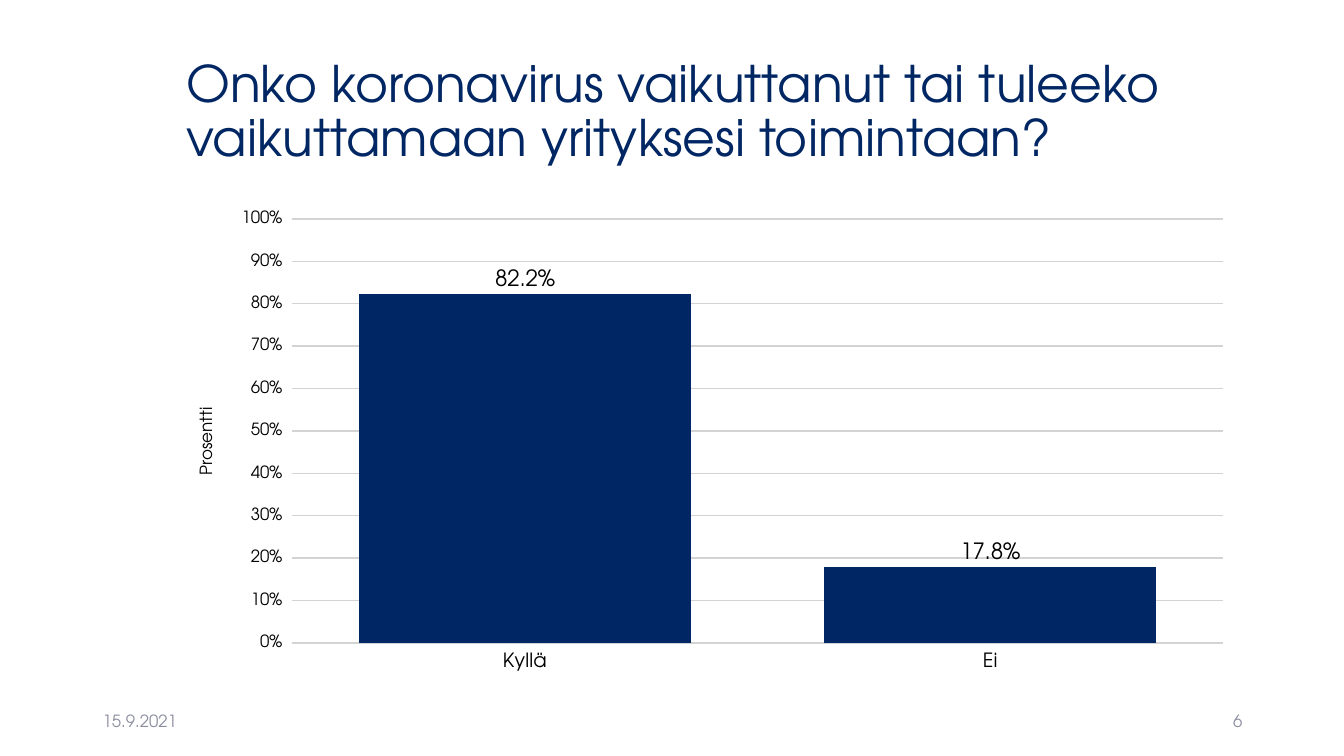
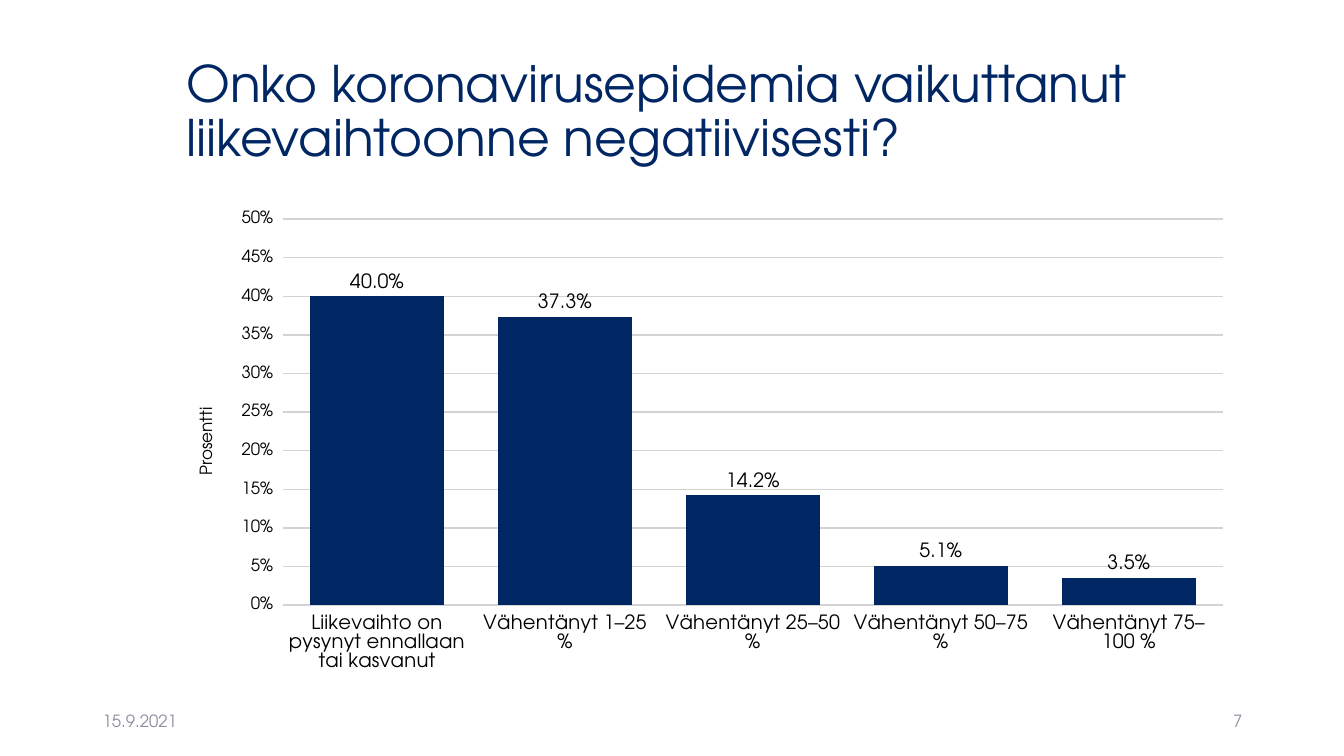
from pptx import Presentation
from pptx.chart.data import CategoryChartData
from pptx.dml.color import RGBColor
from pptx.enum.chart import XL_CHART_TYPE as ChartType, XL_LABEL_POSITION as LabelPos
from pptx.enum.text import MSO_ANCHOR as Anchor, PP_ALIGN as Align
from pptx.util import Inches, Pt

FONT = "TeX Gyre Adventor"
COLORS = {"navy": "002663", "footer": "8C8E9F", "text": "000000", "grid": "D3D3D3"}
DATE = "15.9.2021"
AXIS_TITLE = "Prosentti"

SLIDES = [
    {
        "number": 6,
        "title": "Onko koronavirus vaikuttanut tai tuleeko vaikuttamaan yrityksesi toimintaan?",
        "answers": [("Kyllä", 0.822), ("Ei", 0.178)],
        "axis_max": 1,
        "label_size": 16,
    },
    {
        "number": 7,
        "title": "Onko koronavirusepidemia vaikuttanut liikevaihtoonne negatiivisesti?",
        "answers": [
            ("Liikevaihto on pysynyt ennallaan tai kasvanut", 0.4),
            ("Vähentänyt 1–25 %", 0.373),
            ("Vähentänyt 25–50 %", 0.142),
            ("Vähentänyt 50–75 %", 0.051),
            ("Vähentänyt 75–100 %", 0.035),
        ],
        "axis_max": 0.5,
        "label_size": 14,
    },
]

TITLE_BOX = (1.75, 0.4, 10.59, 1.45)
CHART_BOX = (1.75, 2, 10.59, 4.76)
DATE_BOX = (0.92, 6.95, 3, 0.4)
NUMBER_BOX = (9.42, 6.95, 3, 0.4)


def rgb(name):
    return RGBColor.from_string(COLORS[name])


def set_font(font, size, color="text"):
    font.name = FONT
    font.size = Pt(size)
    font.bold = False
    font.color.rgb = rgb(color)


def add_text(s, box, text, size=12, color="footer", align=Align.LEFT, spacing=1.0):
    tf = s.shapes.add_textbox(*map(Inches, box)).text_frame
    tf.word_wrap = True
    tf.vertical_anchor = Anchor.MIDDLE
    p = tf.paragraphs[0]
    p.alignment = align
    p.line_spacing = spacing
    r = p.add_run()
    r.text = text
    set_font(r.font, size, color)


def add_column_chart(s, answers, axis_max, label_size):
    data = CategoryChartData(number_format="0.0%")
    data.categories = [answer for answer, _ in answers]
    data.add_series("Series 1", [share for _, share in answers])
    chart = s.shapes.add_chart(
        ChartType.COLUMN_CLUSTERED, *map(Inches, CHART_BOX), data).chart
    chart.has_title = False
    chart.has_legend = False
    set_font(chart.font, 12)

    plot = chart.plots[0]
    plot.gap_width = 40
    plot.vary_by_categories = False
    fill = plot.series[0].format.fill
    fill.solid()
    fill.fore_color.rgb = rgb("navy")
    plot.has_data_labels = True
    labels = plot.data_labels
    labels.show_value = True
    labels.position = LabelPos.OUTSIDE_END
    labels.number_format = "0.0%"
    labels.number_format_is_linked = False
    set_font(labels.font, label_size)

    for axis, size in ((chart.category_axis, 14), (chart.value_axis, 12)):
        axis.format.line.fill.background()
        set_font(axis.tick_labels.font, size)

    axis = chart.value_axis
    axis.minimum_scale = 0
    axis.maximum_scale = axis_max
    axis.major_unit = axis_max / 10
    axis.tick_labels.number_format = "0%"
    axis.tick_labels.number_format_is_linked = False
    grid = axis.major_gridlines.format.line
    grid.width = Pt(1)
    grid.color.rgb = rgb("grid")
    p = axis.axis_title.text_frame.paragraphs[0]
    r = p.add_run()
    r.text = AXIS_TITLE
    set_font(r.font, 12)


def main():
    prs = Presentation()
    prs.slide_width, prs.slide_height = Inches(13.33), Inches(7.5)
    for content in SLIDES:
        s = prs.slides.add_slide(prs.slide_layouts[6])
        add_text(s, TITLE_BOX, content["title"], size=36, color="navy", spacing=0.9)
        add_text(s, DATE_BOX, DATE)
        add_text(s, NUMBER_BOX, str(content["number"]), align=Align.RIGHT)
        add_column_chart(s, content["answers"], content["axis_max"], content["label_size"])
    prs.save("out.pptx")


if __name__ == "__main__":
    main()
